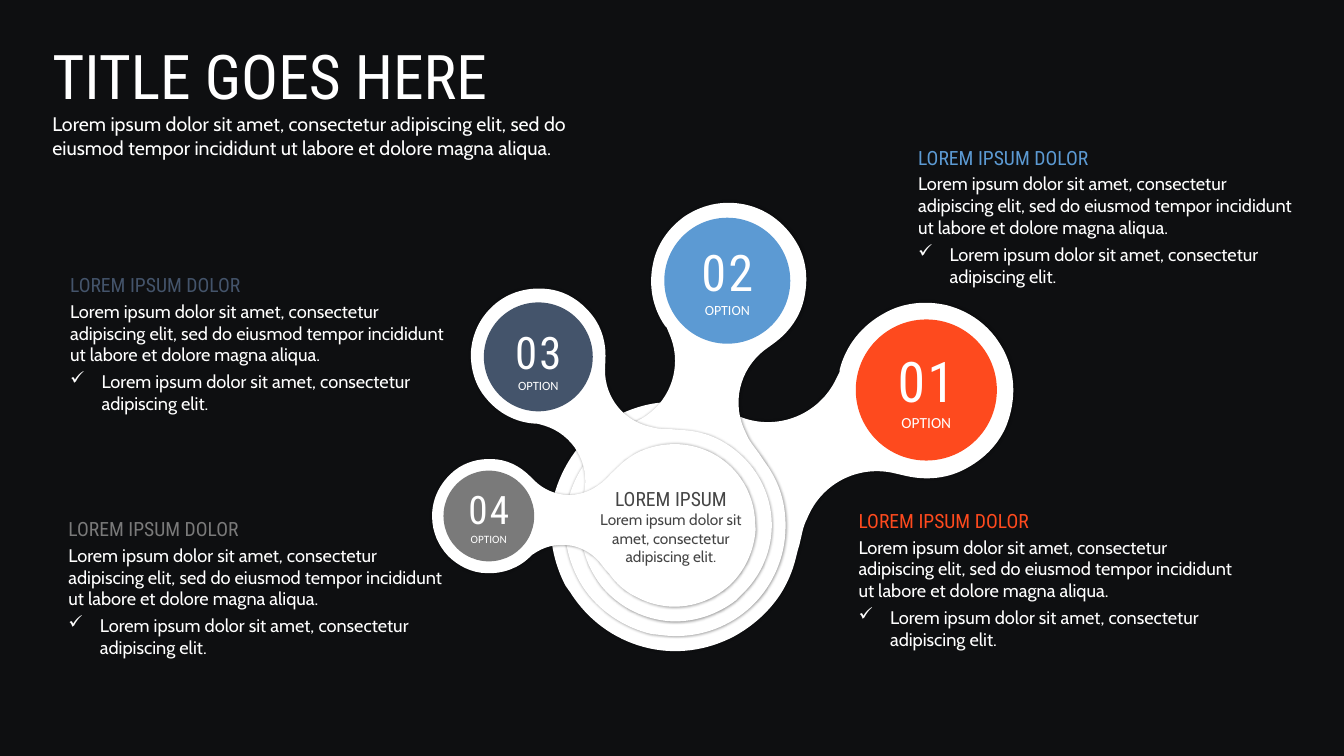
from math import cos, radians, sin

from lxml import etree
from pptx import Presentation
from pptx.dml.color import RGBColor
from pptx.enum.shapes import MSO_SHAPE
from pptx.enum.text import MSO_ANCHOR, MSO_AUTO_SIZE, PP_ALIGN
from pptx.oxml.ns import qn
from pptx.util import Pt

LEFT, CENTER = PP_ALIGN.LEFT, PP_ALIGN.CENTER
TOP = MSO_ANCHOR.TOP
GROW = MSO_AUTO_SIZE.SHAPE_TO_FIT_TEXT
OVAL = MSO_SHAPE.OVAL

BACKDROP = RGBColor(0x0E, 0x0F, 0x11)
WHITE = RGBColor(0xFF, 0xFF, 0xFF)
CHARCOAL = RGBColor(0x45, 0x45, 0x45)
ORANGE = RGBColor(0xFE, 0x4A, 0x1E)
BLUE = RGBColor(0x5C, 0x9A, 0xD3)
NAVY = RGBColor(0x44, 0x54, 0x6B)
GRAY = RGBColor(0x7A, 0x7A, 0x7A)
HEAD_FONT, BODY_FONT, LABEL_FONT = "Roboto Condensed", "Cabin", "Calibri"

# Content
TITLE = "TITLE GOES HERE"
HUB_HEAD = "LOREM IPSUM"
OPTION_HEAD = "LOREM IPSUM DOLOR"
OPTION_LABEL = "OPTION"
SHORT = "Lorem ipsum dolor sit amet, consectetur adipiscing elit."
LONG = ("Lorem ipsum dolor sit amet, consectetur adipiscing elit, sed do eiusmod "
        "tempor incididunt ut labore et dolore magna aliqua.")

# Number, colour, badge centre and diameter, number and label sizes,
# label box top, width and height, place of the description
OPTIONS = [
    ("01", ORANGE, (661.7, 278.6), 100.8, 40, 11, (244.6, 56.9, 67), (606.2, 360)),
    ("02", BLUE, (519.5, 200.5), 90, 36, 10, (169.5, 56.9, 61.9), (648.7, 100.4)),
    ("03", NAVY, (384.5, 254.9), 77.8, 32, 9, (229, 56.9, 54.7), (43.0, 191.5)),
    ("04", GRAY, (349.2, 368.6), 64.8, 28, 8, (344.2, 43.2, 48.2), (41.8, 365.8)),
]

# Arms from back to front: centre, width, turn in degrees
ARMS = [
    ((554.4, 334.4), 309.6, 0),
    ((496.1, 303.8), 273.6, -49.3),
    ((441.4, 326.9), 237.6, -100.6),
    ((427.7, 374), 201.6, 211.3),
]

# Arm outline in its own units: one pair is a line, three are a curve
OUTLINE_CENTER, OUTLINE_WIDTH = (7.7, 4.645), 4.3
OUTLINE_START = (9.99, 4.21)
OUTLINE = [
    [(9.92, 4.39), (9.78, 4.54), (9.6, 4.64)],
    [(9.41, 4.75), (9.19, 4.77), (8.98, 4.72)],
    [(8.85, 4.69)],
    [(8.5, 4.62), (8.15, 4.8), (8.01, 5.14)],
    [(7.99, 5.18), (7.97, 5.23), (7.96, 5.28)],
    [(7.93, 5.41)],
    [(7.92, 5.44), (7.91, 5.48), (7.9, 5.52)],
    [(7.86, 5.69), (7.79, 5.84), (7.69, 5.97)],
    [(7.58, 6.11), (7.45, 6.22), (7.29, 6.31)],
    [(7.01, 6.46), (6.69, 6.5), (6.39, 6.42)],
    [(6.09, 6.34), (5.83, 6.15), (5.66, 5.88)],
    [(5.64, 5.86), (5.63, 5.83), (5.61, 5.81)],
    [(5.46, 5.52), (5.42, 5.18), (5.51, 4.87)],
    [(5.61, 4.55), (5.82, 4.29), (6.11, 4.13)],
    [(6.27, 4.05), (6.43, 4), (6.61, 3.99)],
    [(6.78, 3.97), (6.94, 3.99), (7.1, 4.05)],
    [(7.15, 4.07), (7.2, 4.09), (7.25, 4.1)],
    [(7.33, 4.13)],
    [(7.69, 4.28), (8.1, 4.13), (8.28, 3.79)],
    [(8.32, 3.71)],
    [(8.33, 3.7), (8.33, 3.69), (8.33, 3.67)],
    [(8.39, 3.43), (8.55, 3.23), (8.77, 3.11)],
    [(8.96, 3), (9.19, 2.98), (9.4, 3.03)],
    [(9.62, 3.09), (9.8, 3.22), (9.92, 3.41)],
    [(9.93, 3.43), (9.94, 3.44), (9.95, 3.46)],
    [(10.08, 3.7), (10.08, 3.97), (9.99, 4.21)],
]


def paint(shape, color):
    shape.shadow.inherit = False
    shape.fill.solid()
    shape.fill.fore_color.rgb = color
    shape.line.fill.background()


def add_arm(page, center, width, turn):
    scale = width / OUTLINE_WIDTH
    cosine, sine = cos(radians(turn)), sin(radians(turn))

    def place(point):
        x, y = ((p - c) * scale for p, c in zip(point, OUTLINE_CENTER))
        return (Pt(center[0] + x * cosine - y * sine),
                Pt(center[1] + x * sine + y * cosine))

    builder = page.shapes.build_freeform(*place(OUTLINE_START))
    builder.add_line_segments([place(p) for step in OUTLINE for p in step], close=True)
    arm = builder.convert_to_shape()
    paint(arm, WHITE)

    # Join each three control points into one curve
    points = iter(arm.element.findall(".//" + qn("a:lnTo")))
    for step in OUTLINE:
        nodes = [next(points) for _ in step]
        if len(nodes) == 3:
            curve = etree.Element(qn("a:cubicBezTo"))
            nodes[0].addprevious(curve)
            for node in nodes:
                curve.append(node[0])
                node.getparent().remove(node)

    # Soft dark edge
    effects = arm.element.spPr.find(qn("a:effectLst"))
    shadow = etree.SubElement(effects, qn("a:outerShdw"), blurRad=str(Pt(2)),
                              dist="0", dir="0", algn="ctr", rotWithShape="0")
    tint = etree.SubElement(shadow, qn("a:srgbClr"), val="000000")
    etree.SubElement(tint, qn("a:alpha"), val="40000")


def write(box, lines, align=LEFT, insets=(7.2, 3.6)):
    """Each line: text, size, font, colour, then a dict of extras."""
    frame = box.text_frame
    side, edge = (Pt(inset) for inset in insets)
    settings = {"word_wrap": True, "auto_size": GROW, "vertical_anchor": TOP,
                "margin_left": side, "margin_right": side,
                "margin_top": edge, "margin_bottom": edge}
    for name, value in settings.items():
        setattr(frame, name, value)
    for index, (text, size, font, color, extras) in enumerate(lines):
        para = frame.paragraphs[0] if index == 0 else frame.add_paragraph()
        layout = {"alignment": align, "line_spacing": 1.0,
                  "space_before": Pt(extras.get("before", 0))}
        for name, value in layout.items():
            setattr(para, name, value)
        if "bullet" in extras:
            props = para._p.get_or_add_pPr()
            props.set("marL", str(Pt(22.5)))
            props.set("indent", str(-Pt(22.5)))
            etree.SubElement(props, qn("a:buChar"), char=extras["bullet"])
        span = para.add_run()
        span.text = text
        for name, value in {"size": Pt(size), "name": font, "bold": False}.items():
            setattr(span.font, name, value)
        span.font.color.rgb = color
        if "tracking" in extras:
            span._r.get_or_add_rPr().set("spc", str(extras["tracking"]))


def add_text(page, left, top, width, height, lines, **options):
    box = page.shapes.add_textbox(Pt(left), Pt(top), Pt(width), Pt(height))
    write(box, lines, **options)


def main():
    deck = Presentation()
    deck.slide_width, deck.slide_height = Pt(960), Pt(540)
    page = deck.slides.add_slide(deck.slide_layouts[5])
    page.background.fill.solid()
    page.background.fill.fore_color.rgb = BACKDROP

    # Title with its introduction
    title = page.shapes.title
    title.left, title.top, title.width, title.height = Pt(30.2), Pt(23.8), Pt(401.8), Pt(94.3)
    write(title, [(TITLE, 44, HEAD_FONT, WHITE, {}), (LONG, 14, BODY_FONT, WHITE, {})])

    # Arms around the hub
    for center, width, turn in ARMS:
        add_arm(page, center, width, turn)

    # Badges and descriptions
    for number, color, (x, y), size, big, small, label, (left, top) in OPTIONS:
        badge = page.shapes.add_shape(OVAL, Pt(x - size / 2), Pt(y - size / 2),
                                      Pt(size), Pt(size))
        paint(badge, color)
        label_top, width, height = label
        add_text(page, x - width / 2, label_top, width, height, [
            (number, big, HEAD_FONT, WHITE, {"tracking": 150}),
            (OPTION_LABEL, small, LABEL_FONT, WHITE, {}),
        ], align=CENTER, insets=(5.4, 2.7))
        add_text(page, left, top, 288, 108, [
            (OPTION_HEAD, 14, HEAD_FONT, color, {}),
            (LONG, 13, BODY_FONT, WHITE, {"before": 2.4}),
            (SHORT, 13, BODY_FONT, WHITE, {"before": 3.6, "bullet": "✓"}),
        ])

    # Hub text
    add_text(page, 418.8, 344.2, 121, 64.1, [
        (HUB_HEAD, 14, HEAD_FONT, CHARCOAL, {}),
        (SHORT, 11, BODY_FONT, CHARCOAL, {}),
    ], align=CENTER)

    deck.save("out.pptx")


if __name__ == "__main__":
    main()
